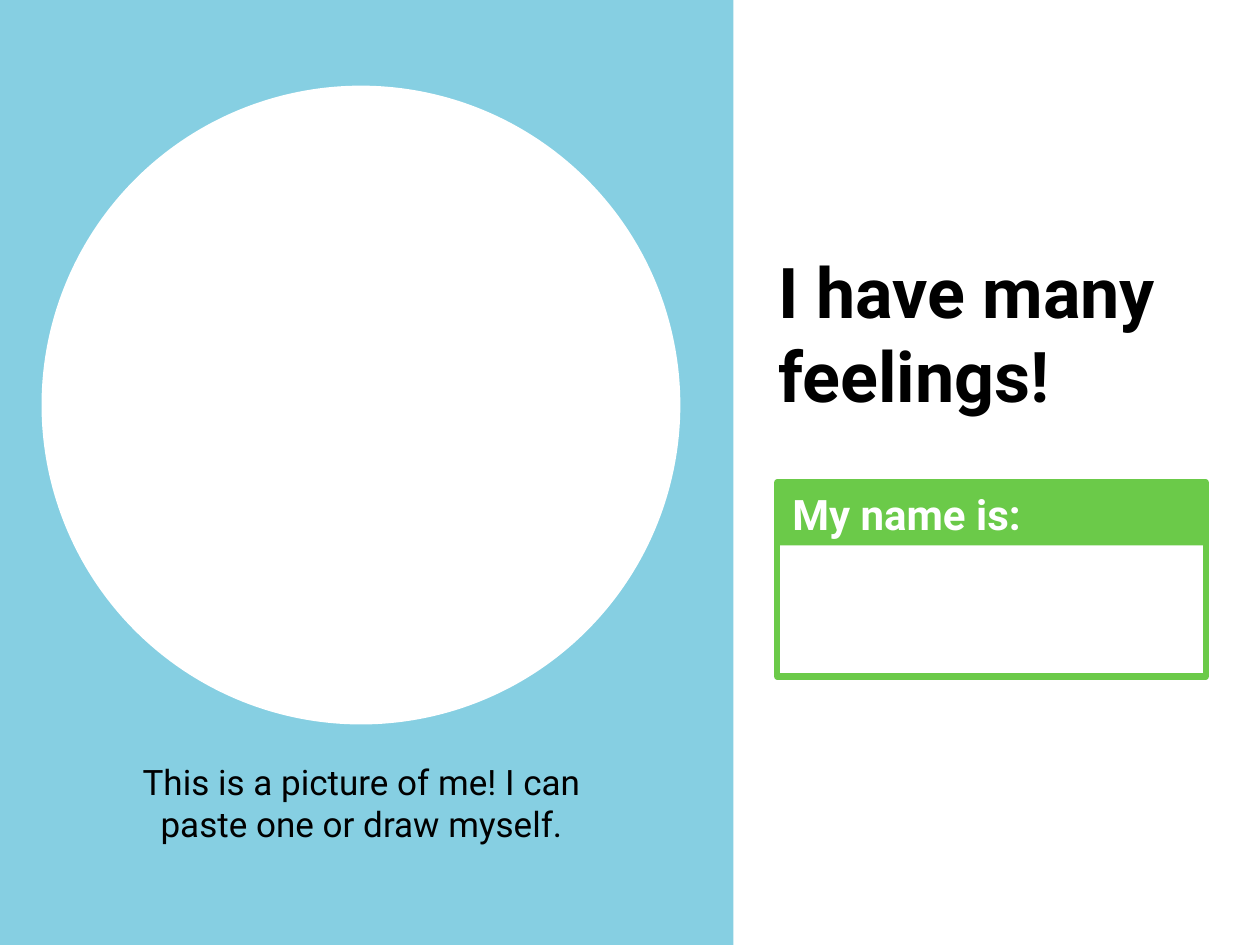
import pptx
import pptx.util
import pptx.dml.color
import pptx.enum.shapes
import pptx.enum.text

deck = pptx.Presentation()
deck.slide_width = pptx.util.Inches(10)
deck.slide_height = pptx.util.Inches(7.5)
slide = deck.slides.add_slide(deck.slide_layouts[6])

# Grid of 100 columns by 75 rows
col = deck.slide_width / 100
row = deck.slide_height / 75
kinds = pptx.enum.shapes.MSO_SHAPE
aligns = pptx.enum.text.PP_ALIGN


def place(kind, x, y, wide, high, fill=None):
    spot = [int(n) for n in (x * col, y * row, wide * col, high * row)]
    if kind is None:
        return slide.shapes.add_textbox(*spot)
    shape = slide.shapes.add_shape(kind, *spot)
    shape.shadow.inherit = False
    shape.line.fill.background()
    if fill:
        shape.fill.solid()
        shape.fill.fore_color.rgb = pptx.dml.color.RGBColor.from_string(fill)
    else:
        shape.fill.background()
    return shape


def write(shape, lines, size, color, bold=False, align=aligns.LEFT):
    frame = shape.text_frame
    frame.word_wrap = True
    frame.vertical_anchor = pptx.enum.text.MSO_ANCHOR.TOP
    for i, line in enumerate(lines):
        para = frame.add_paragraph() if i else frame.paragraphs[0]
        para.alignment = align
        run = para.add_run()
        run.text = line
        run.font.name = "Roboto"
        run.font.size = pptx.util.Pt(size)
        run.font.bold = bold
        run.font.color.rgb = pptx.dml.color.RGBColor.from_string(color)


# Title
title = place(None, 60.8, 19.2, 34, 14.5)
write(title, ["I have many", "feelings!"], 40, "000000", bold=True)

# Name tag: green header and frame
green = "6BCA49"
head = place(kinds.RECTANGLE, 61.9, 38.3, 34, 5, green)
write(head, ["My name is:"], 24, "FFFFFF", bold=True)
tag = place(kinds.RECTANGLE, 61.7, 38.3, 34, 15.4)
tag.line.color.rgb = pptx.dml.color.RGBColor.from_string(green)
tag.line.width = pptx.util.Pt(3.5)

# Blue panel with caption and portrait circle
place(kinds.RECTANGLE, 0, 0, 58.2, 75, "86CFE2")
note = place(None, 8.5, 59.9, 40.4, 7.7)
write(note, ["This is a picture of me! I can paste one or draw myself."],
      20, "000000", align=aligns.CENTER)
place(kinds.OVAL, 3.3, 6.8, 50.7, 50.7, "FFFFFF")

deck.save("out.pptx")
